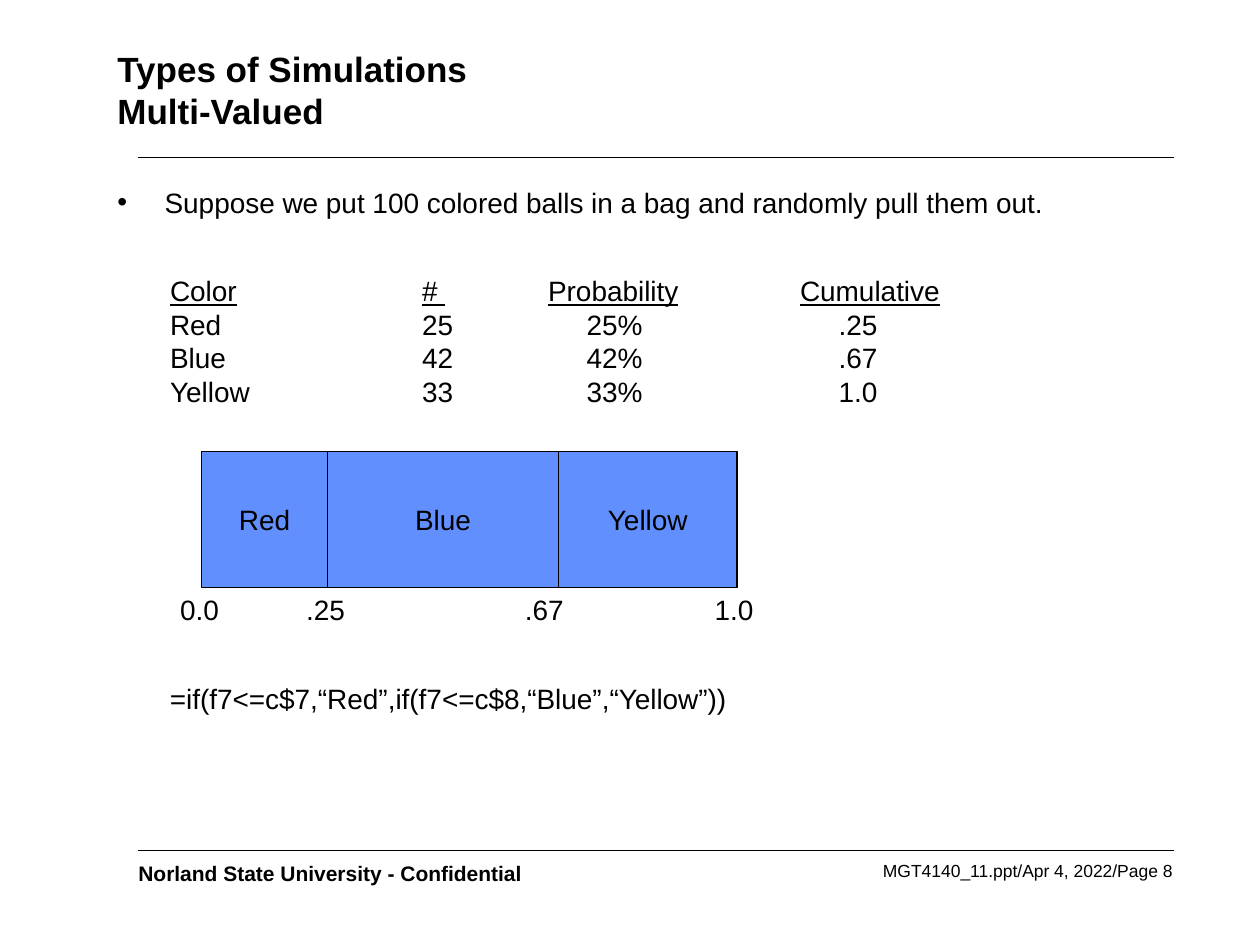
"""Build the slide on multi-valued simulations with coloured balls."""
from typing import NamedTuple

from lxml.etree import SubElement
from pptx import Presentation
from pptx.dml.color import RGBColor
from pptx.enum.shapes import MSO_CONNECTOR as CONN, MSO_SHAPE as SHAPE
from pptx.enum.text import MSO_ANCHOR as ANCHOR, PP_ALIGN as ALIGN
from pptx.oxml.ns import qn
from pptx.util import Pt

BLACK = RGBColor(0x00, 0x00, 0x00)
BLUE = RGBColor(0x61, 0x8F, 0xFD)
FONT = "Arial"
BAR_LEFT, BAR_TOP, BAR_HEIGHT = 115.2, 257.8, 77.8
TICK_WIDTH = 50
ROW_HEIGHT = 19.2
CELL_INSET, VALUE_INDENT = 7.2, 22


class Label(NamedTuple):
    text: str
    left: float
    top: float
    width: float
    height: float
    size: float = 16
    bold: bool = False
    align: ALIGN = ALIGN.LEFT
    anchor: ANCHOR = ANCHOR.TOP


class Column(NamedTuple):
    header: str
    values: tuple[str, ...]
    width: float
    indent: float = 0


class Bar(NamedTuple):
    text: str
    width: float


class Tick(NamedTuple):
    text: str
    center: float


TITLE = Label("Types of Simulations\vMulti-Valued", 60, 18, 612, 66, 20, True,
              anchor=ANCHOR.MIDDLE)
BULLET = Label("Suppose we put 100 colored balls in a bag and randomly pull them out.",
               60, 102.5, 612, 34)
LABELS = [
    Label("MGT4140_11.ppt/Apr 4, 2022/Page 8", 402, 488, 275, 19, 10, align=ALIGN.RIGHT),
    Label("Norland State University - Confidential", 72, 488, 276.5, 21.6, 12, True),
    TITLE,
    Label("=if(f7<=c$7,“Red”,if(f7<=c$8,“Blue”,“Yellow”))", 90, 386, 400, 26.6),
]
COLUMNS = [
    Column("Color", ("Red", "Blue", "Yellow"), 144),
    Column("# ", ("25", "42", "33"), 72),
    Column("Probability", ("25%", "42%", "33%"), 144, VALUE_INDENT),
    Column("Cumulative", (".25", ".67", "1.0"), 110, VALUE_INDENT),
]
BARS = [Bar("Red", 72), Bar("Blue", 132), Bar("Yellow", 102)]
TICKS = [Tick("0.0", 114), Tick(".25", 186), Tick(".67", 311), Tick("1.0", 419.5)]
RULE_LEFT, RULE_RIGHT, RULE_TOPS = 79, 671, (90, 486)


def format_runs(tf, size: float = 16, bold: bool = False, underline: bool = False) -> None:
    for p in tf.paragraphs:
        for r in p.runs:
            r.font.name = FONT
            r.font.size = Pt(size)
            r.font.bold = bold
            r.font.underline = underline
            r.font.color.rgb = BLACK


def add_label(s, label: Label):
    sp = s.shapes.add_textbox(Pt(label.left), Pt(label.top), Pt(label.width), Pt(label.height))
    tf = sp.text_frame
    tf.word_wrap = True
    tf.vertical_anchor = label.anchor
    p = tf.paragraphs[0]
    p.text = label.text
    p.alignment = label.align
    format_runs(tf, label.size, label.bold)
    return sp


def add_bullet(s, label: Label) -> None:
    pPr = add_label(s, label).text_frame.paragraphs[0]._p.get_or_add_pPr()
    pPr.set("marL", str(Pt(27)))
    pPr.set("indent", str(Pt(-27)))
    SubElement(pPr, qn("a:buFont"), typeface=FONT)
    SubElement(pPr, qn("a:buChar"), char="•")


def add_rule(s, top: float) -> None:
    line = s.shapes.add_connector(CONN.STRAIGHT, Pt(RULE_LEFT), Pt(top), Pt(RULE_RIGHT), Pt(top))
    line.line.color.rgb = BLACK
    line.line.width = Pt(1)
    SubElement(line._element.spPr, qn("a:effectLst"))


def add_probability_table(s, columns: list[Column], left: float, top: float) -> None:
    rows = len(columns[0].values) + 1
    width = sum(col.width for col in columns)
    table = s.shapes.add_table(rows, len(columns), Pt(left), Pt(top), Pt(width),
                               Pt(rows * ROW_HEIGHT)).table
    table.first_row = table.horz_banding = False
    for row in table.rows:
        row.height = Pt(ROW_HEIGHT)
    for j, col in enumerate(columns):
        table.columns[j].width = Pt(col.width)
        for i, text in enumerate((col.header, *col.values)):
            cell = table.cell(i, j)
            cell.fill.background()
            cell.margin_left = Pt(CELL_INSET + (col.indent if i else 0))
            cell.margin_right = cell.margin_top = cell.margin_bottom = 0
            cell.text_frame.text = text
            format_runs(cell.text_frame, underline=i == 0)


def add_bar(s, bar: Bar, left: float) -> None:
    sp = s.shapes.add_shape(SHAPE.RECTANGLE, Pt(left), Pt(BAR_TOP), Pt(bar.width), Pt(BAR_HEIGHT))
    sp.shadow.inherit = False
    sp.fill.solid()
    sp.fill.fore_color.rgb = BLUE
    sp.line.color.rgb = BLACK
    sp.line.width = Pt(0.75)
    tf = sp.text_frame
    tf.text = bar.text
    tf.vertical_anchor = ANCHOR.MIDDLE
    tf.paragraphs[0].alignment = ALIGN.CENTER
    format_runs(tf)


def main() -> None:
    prs = Presentation()
    prs.slide_width, prs.slide_height = Pt(720), Pt(540)
    s = prs.slides.add_slide(prs.slide_layouts[6])
    for top in RULE_TOPS:
        add_rule(s, top)
    for label in LABELS:
        add_label(s, label)
    add_bullet(s, BULLET)
    add_probability_table(s, COLUMNS, 90, 158)
    left = BAR_LEFT
    for bar in BARS:
        add_bar(s, bar, left)
        left += bar.width
    for tick in TICKS:
        add_label(s, Label(tick.text, tick.center - TICK_WIDTH / 2, BAR_TOP + BAR_HEIGHT - 0.6,
                           TICK_WIDTH, 26.6, align=ALIGN.CENTER))
    prs.save("out.pptx")


if __name__ == "__main__":
    main()
